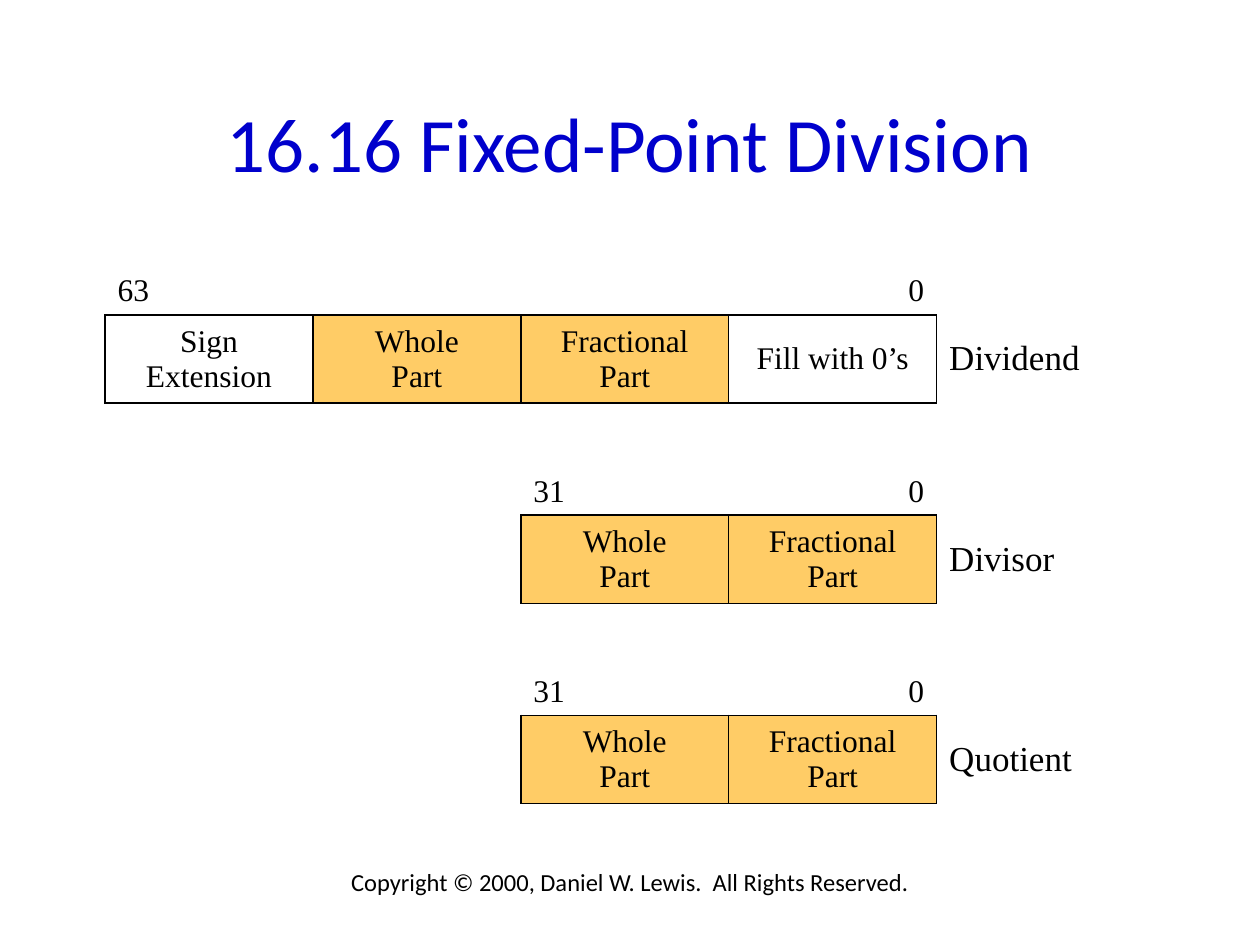
from dataclasses import dataclass
from typing import Optional

import pptx
import pptx.dml.color
import pptx.enum.text
import pptx.oxml
import pptx.oxml.ns
import pptx.util

Pt = pptx.util.Pt
RGB = pptx.dml.color.RGBColor
Align = pptx.enum.text.PP_ALIGN
Anchor = pptx.enum.text.MSO_ANCHOR


@dataclass(frozen=True)
class Theme:
    heading_font: str = "Calibri"
    body_font: str = "Times New Roman"
    title_color: str = "0000CC"
    ink: str = "000000"
    part_fill: str = "FFCC66"
    title_size: int = 44
    label_size: int = 20
    field_size: int = 18
    footer_size: int = 14
    border: int = 1


@dataclass(frozen=True)
class Cell:
    text: str = ""
    size: int = 18
    align: Align = Align.CENTER
    anchor: Anchor = Anchor.MIDDLE
    fill: Optional[str] = None
    bordered: bool = False


@dataclass(frozen=True)
class Register:
    name: str
    top_bit: str
    fields: tuple[Cell, ...]


THEME = Theme()
LEFT, TOP, COL_WIDTH, COLUMNS = 60, 138, 118.8, 5
FIRST_BITS_HEIGHT, BITS_HEIGHT, FIELD_HEIGHT = 42, 64, 47
# Each side of a cell: tag, row step and column step to its neighbour
SIDES = (("lnL", 0, -1), ("lnR", 0, 1), ("lnT", -1, 0), ("lnB", 1, 0))


def field(text: str, fill: Optional[str] = None) -> Cell:
    return Cell(text, THEME.field_size, fill=fill, bordered=True)


PARTS = (field("Whole\nPart", THEME.part_fill),
         field("Fractional\nPart", THEME.part_fill))
REGISTERS = (
    Register("Dividend", "63",
             (field("Sign\nExtension"), *PARTS, field("Fill with 0’s"))),
    Register("Divisor", "31", PARTS),
    Register("Quotient", "31", PARTS),
)


def register_rows(reg: Register) -> list[list[Cell]]:
    """Give the row of bit numbers and the row of fields, right-aligned."""
    pad = [Cell()] * (COLUMNS - 1 - len(reg.fields))
    high = Cell(reg.top_bit, THEME.field_size, Align.LEFT, Anchor.BOTTOM)
    low = Cell("0", THEME.field_size, Align.RIGHT, Anchor.BOTTOM)
    between = [Cell()] * (len(reg.fields) - 2)
    label = Cell(reg.name, THEME.label_size, Align.LEFT)
    return [[*pad, high, *between, low, Cell()], [*pad, *reg.fields, label]]


def write(p, text: str, font: str, size: int, color: str, align: Align) -> None:
    for i, line in enumerate(text.split("\n")):
        if i:
            p.add_line_break()
        p.add_run().text = line
    p.alignment = align
    p.font.name = font
    p.font.size = Pt(size)
    p.font.color.rgb = RGB.from_string(color)


def add_heading(s, text: str, top: float, height: float, size: int,
                color: str, anchor: Anchor) -> None:
    """Add a centred line of text across the slide."""
    tf = s.shapes.add_textbox(Pt(54), Pt(top), Pt(612), Pt(height)).text_frame
    tf.word_wrap = True
    tf.vertical_anchor = anchor
    write(tf.paragraphs[0], text, THEME.heading_font, size, color, Align.CENTER)


def add_border(tc_pr, tag: str, visible: bool) -> None:
    ln = pptx.oxml.ns.qn(f"a:{tag}")
    line = tc_pr.makeelement(ln, {"w": str(Pt(THEME.border))})
    tc_pr.append(line)
    paint = "solidFill" if visible else "noFill"
    fill = line.makeelement(pptx.oxml.ns.qn(f"a:{paint}"), {})
    line.append(fill)
    if visible:
        fill.append(fill.makeelement(pptx.oxml.ns.qn("a:srgbClr"),
                                     {"val": THEME.ink}))


def is_bordered(grid: list[list[Cell]], row: int, col: int) -> bool:
    inside = 0 <= row < len(grid) and 0 <= col < COLUMNS
    return inside and grid[row][col].bordered


def add_registers(s, registers: tuple[Register, ...]) -> None:
    grid = [row for reg in registers for row in register_rows(reg)]
    heights = [BITS_HEIGHT, FIELD_HEIGHT] * len(registers)
    heights[0] = FIRST_BITS_HEIGHT
    table = s.shapes.add_table(len(grid), COLUMNS, Pt(LEFT), Pt(TOP),
                               Pt(COL_WIDTH * COLUMNS), Pt(sum(heights))).table
    table.first_row = table.horz_banding = False
    for column in table.columns:
        column.width = Pt(COL_WIDTH)
    for r, (row, height) in enumerate(zip(grid, heights)):
        table.rows[r].height = Pt(height)
        for c, item in enumerate(row):
            cell = table.cell(r, c)
            cell.vertical_anchor = item.anchor
            tc_pr = cell._tc.get_or_add_tcPr()
            for tag, dr, dc in SIDES:
                add_border(tc_pr, tag,
                           item.bordered or is_bordered(grid, r + dr, c + dc))
            if item.fill:
                cell.fill.solid()
                cell.fill.fore_color.rgb = RGB.from_string(item.fill)
            else:
                cell.fill.background()
            if item.text:
                write(cell.text_frame.paragraphs[0], item.text,
                      THEME.body_font, item.size, THEME.ink, item.align)


def main() -> None:
    prs = pptx.Presentation()
    prs.slide_width, prs.slide_height = Pt(720), Pt(540)
    s = prs.slides.add_slide(prs.slide_layouts[6])
    add_heading(s, "Copyright © 2000, Daniel W. Lewis.  All Rights Reserved.",
                492, 36, THEME.footer_size, THEME.ink, Anchor.TOP)
    add_heading(s, "16.16 Fixed-Point Division", 36, 90,
                THEME.title_size, THEME.title_color, Anchor.MIDDLE)
    add_registers(s, REGISTERS)
    prs.save("out.pptx")


if __name__ == "__main__":
    main()
